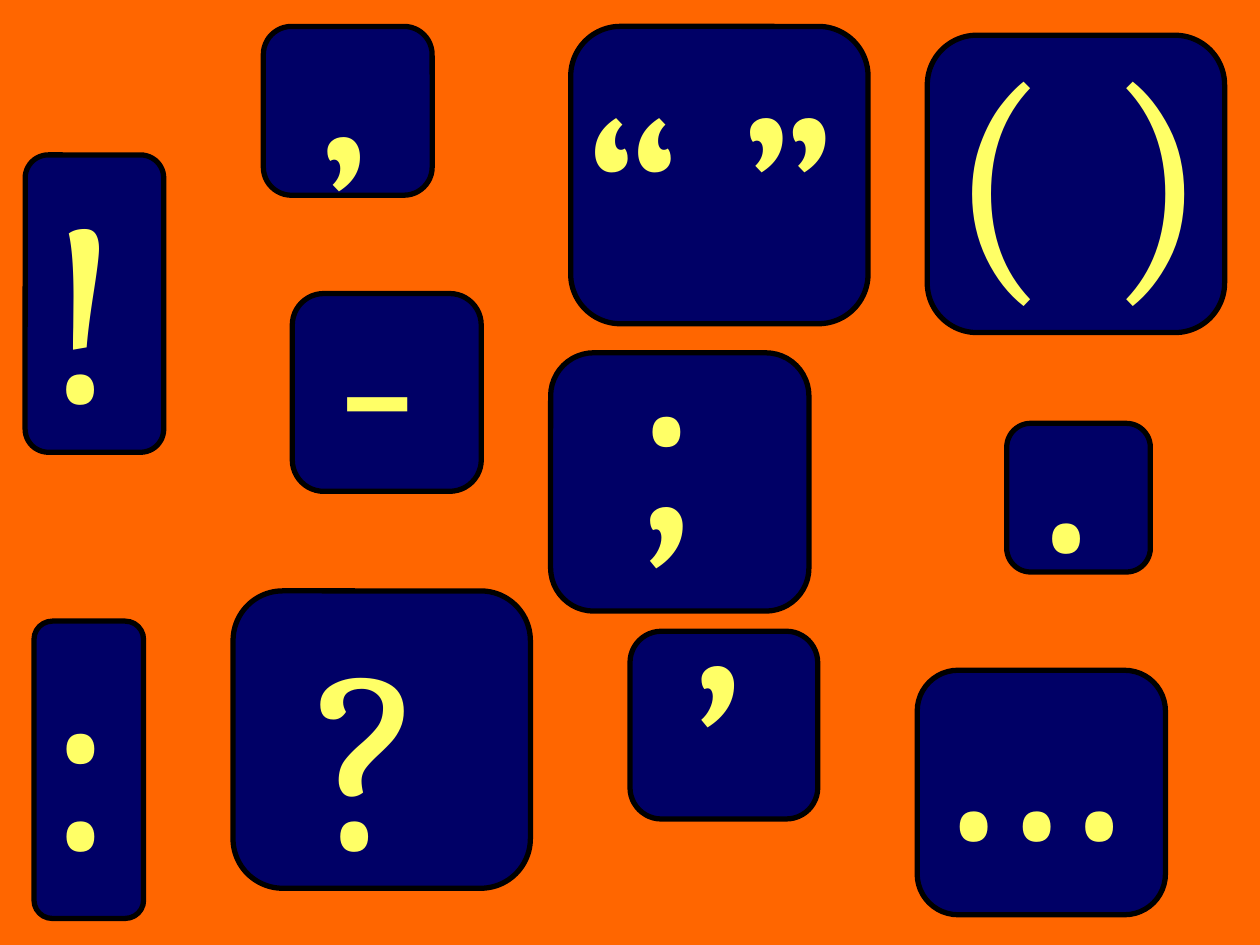
"""Build a slide of punctuation marks on rounded tiles."""
from typing import NamedTuple

from pptx import Presentation
from pptx import util as u
from pptx.dml.color import RGBColor
from pptx.enum import shapes, text

ORANGE = RGBColor(0xFF, 0x66, 0x00)
NAVY = RGBColor(0x00, 0x00, 0x66)
YELLOW = RGBColor(0xFF, 0xFF, 0x66)
BLACK = RGBColor(0x00, 0x00, 0x00)

WIDTH, HEIGHT = u.Inches(10), u.Inches(7.5)
COLUMN, ROW = WIDTH / 100, HEIGHT / 75
MARK_ROWS = 26
NARROW_MARK = 14.9


class Box(NamedTuple):
    """Left, top, width and height in columns and rows of the slide grid."""

    left: float
    top: float
    width: float
    height: float

    def lengths(self) -> tuple[int, int, int, int]:
        """Return the box in slide units."""
        return (round(self.left * COLUMN), round(self.top * ROW),
                round(self.width * COLUMN), round(self.height * ROW))


class Card(NamedTuple):
    """A tile and the punctuation mark placed over it."""

    mark: str
    tile: Box
    mark_left: float
    mark_top: float
    mark_width: float = NARROW_MARK


CARDS = [
    Card("!", Box(2, 12.3, 11, 23.6), 2.8, 10.7),
    Card(".", Box(79.9, 33.6, 11.4, 11.8), 81.5, 22.5),
    Card("’", Box(20.9, 2.1, 13.4, 13.4), 24, 3.6),
    Card(",", Box(50, 50.1, 14.9, 14.9), 53.9, 33.6),
    Card("“ ”", Box(45.3, 2.1, 23.6, 23.6), 45.3, 2.1, 26),
    Card("…", Box(72.8, 53.2, 19.7, 19.4), 72.8, 45.4, 18.1),
    Card("( )", Box(73.6, 2.8, 23.6, 23.6), 74.4, 0, 25.6),
    Card(":", Box(2.7, 49.3, 8.7, 23.6), 2.7, 46.2),
    Card(";", Box(43.7, 28, 20.5, 20.5), 49.2, 21),
    Card("-", Box(23.2, 23.3, 15, 15.7), 25.6, 16.2),
    Card("?", Box(18.5, 46.9, 23.6, 23.6), 24, 46.2),
]


def add_tile(parent, box: Box) -> None:
    """Add one outlined rounded tile."""
    shape = parent.add_shape(shapes.MSO_SHAPE.ROUNDED_RECTANGLE, *box.lengths())
    shape.adjustments[0] = 0.167
    shape.shadow.inherit = False
    shape.fill.solid()
    shape.fill.fore_color.rgb = NAVY
    shape.line.color.rgb = BLACK
    shape.line.width = u.Pt(3)


def add_text(parent, box: Box, words: str, *, size: float = 150,
             font: str = "Cambria", color: RGBColor = YELLOW) -> None:
    """Add a text box with one formatted paragraph."""
    frame = parent.add_textbox(*box.lengths()).text_frame
    frame.word_wrap = True
    frame.auto_size = text.MSO_AUTO_SIZE.SHAPE_TO_FIT_TEXT
    paragraph = frame.paragraphs[0]
    run = paragraph.add_run()
    run.text = words
    run.font.size = u.Pt(size)
    run.font.name = font
    run.font.color.rgb = color


def add_card(slide, card: Card) -> None:
    """Group a tile with its punctuation mark."""
    group = slide.shapes.add_group_shape()
    add_tile(group.shapes, card.tile)
    mark_box = Box(card.mark_left, card.mark_top, card.mark_width, MARK_ROWS)
    add_text(group.shapes, mark_box, card.mark)


def main() -> None:
    """Create and save the presentation."""
    presentation = Presentation()
    presentation.slide_width, presentation.slide_height = WIDTH, HEIGHT
    slide = presentation.slides.add_slide(presentation.slide_layouts[6])
    slide.background.fill.solid()
    slide.background.fill.fore_color.rgb = ORANGE
    for card in CARDS:
        add_card(slide, card)
    presentation.save("out.pptx")


if __name__ == "__main__":
    main()
